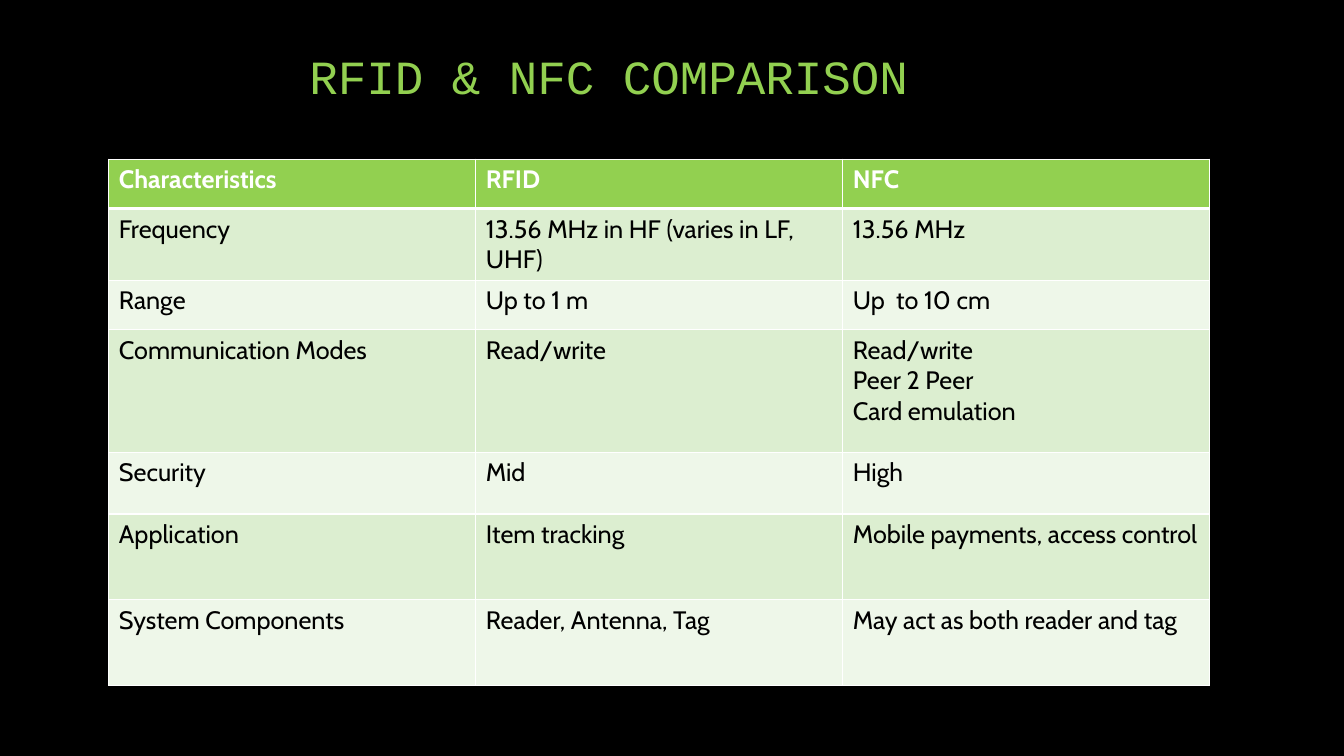
from lxml import etree
from pptx import Presentation
from pptx.dml.color import RGBColor
from pptx.enum.text import MSO_ANCHOR, MSO_AUTO_SIZE, PP_ALIGN
from pptx.oxml.ns import qn
from pptx.util import Inches, Pt

BOTTOM = MSO_ANCHOR.BOTTOM
NO_AUTOFIT = MSO_AUTO_SIZE.NONE
CENTER = PP_ALIGN.CENTER
TITLE_ONLY = 5

BLACK, WHITE, GREEN = "000000", "FFFFFF", "92D050"
BANDS = ("DCEED0", "EEF7E9")
COLUMN_WIDTH = 3.64
ROW_HEIGHTS = (0.49, 0.49, 0.49, 1.22, 0.61, 0.85, 0.85)
COMPARISON = (
    ("Characteristics", "RFID", "NFC"),
    ("Frequency", "13.56 MHz in HF (varies in LF, UHF)", "13.56 MHz"),
    ("Range", "Up to 1 m", "Up  to 10 cm"),
    ("Communication Modes", "Read/write", "Read/write\nPeer 2 Peer\nCard emulation"),
    ("Security", "Mid", "High"),
    ("Application", "Item tracking", "Mobile payments, access control"),
    ("System Components", "Reader, Antenna, Tag", "May act as both reader and tag"),
)


def paint(fill, color):
    fill.solid()
    fill.fore_color.rgb = RGBColor.from_string(color)


def add_span(para, text, font, size, color, bold=False):
    span = para.add_run()
    span.text = text
    span.font.name = font
    span.font.size = Pt(size)
    span.font.bold = bold
    span.font.color.rgb = RGBColor.from_string(color)


def set_title(page, text):
    title = page.shapes.title
    title.left, title.top = Inches(2.58), Inches(0.17)
    title.width, title.height = Inches(6.92), Inches(0.92)
    frame = title.text_frame
    frame.word_wrap = True
    frame.auto_size = NO_AUTOFIT
    frame.vertical_anchor = BOTTOM
    para = frame.paragraphs[0]
    para.alignment = CENTER
    para.line_spacing = 0.9
    add_span(para, text, "Courier New", 34, GREEN)


def set_borders(cell, widths):
    properties = cell._tc.get_or_add_tcPr()
    for side, width in widths.items():
        line = etree.SubElement(properties, qn(f"a:ln{side}"), w=str(Pt(width)))
        solid = etree.SubElement(line, qn("a:solidFill"))
        etree.SubElement(solid, qn("a:srgbClr"), val=WHITE)


def fill_cell(cell, text, row_index):
    header = row_index == 0
    top = 3 if row_index == 1 else 1
    set_borders(cell, {"L": 1, "R": 1, "T": top, "B": 3 if header else 1})
    paint(cell.fill, GREEN if header else BANDS[(row_index - 1) % 2])
    frame = cell.text_frame
    for index, line in enumerate(text.split("\n")):
        para = frame.add_paragraph() if index else frame.paragraphs[0]
        add_span(para, line, "Cabin", 18, WHITE if header else BLACK, header)


def add_comparison(page):
    columns = len(COMPARISON[0])
    table = page.shapes.add_table(
        len(COMPARISON), columns, Inches(1.08), Inches(1.58),
        Inches(COLUMN_WIDTH * columns), Inches(sum(ROW_HEIGHTS)),
    ).table
    for column in table.columns:
        column.width = Inches(COLUMN_WIDTH)
    for row_index, texts in enumerate(COMPARISON):
        table.rows[row_index].height = Inches(ROW_HEIGHTS[row_index])
        for column_index, text in enumerate(texts):
            fill_cell(table.cell(row_index, column_index), text, row_index)


def main():
    deck = Presentation()
    deck.slide_width, deck.slide_height = Inches(13.33), Inches(7.5)
    page = deck.slides.add_slide(deck.slide_layouts[TITLE_ONLY])
    paint(page.background.fill, BLACK)
    set_title(page, "RFID & NFC COMPARISON")
    add_comparison(page)
    deck.save("out.pptx")


if __name__ == "__main__":
    main()
